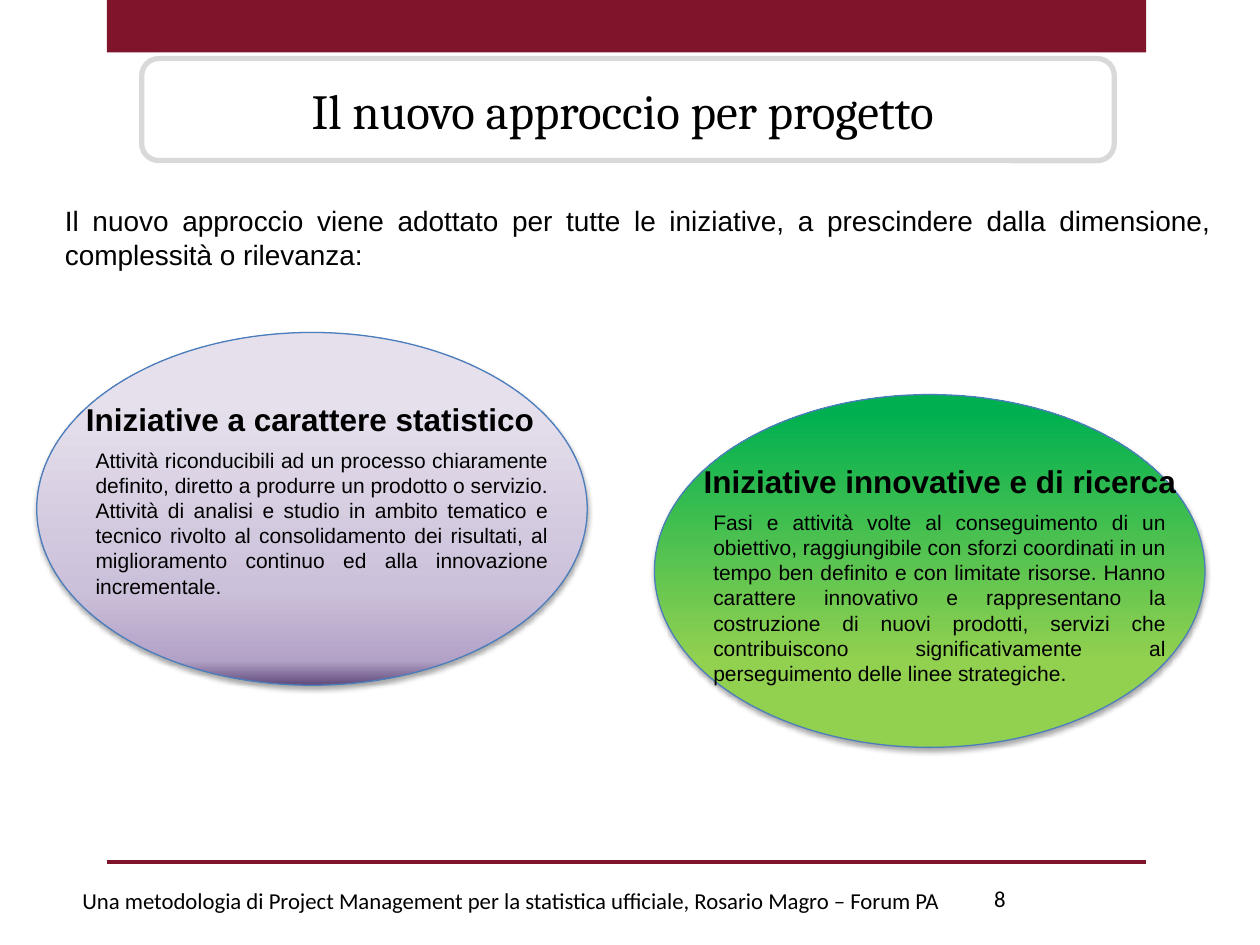
from lxml.etree import SubElement
from pptx import Presentation
from pptx.dml.color import RGBColor
from pptx.enum.shapes import MSO_CONNECTOR, MSO_SHAPE
from pptx.enum.text import MSO_ANCHOR, MSO_AUTO_SIZE, PP_ALIGN
from pptx.oxml.ns import qn
from pptx.util import Pt

COLORS = {
    "band": "7F142A",
    "frame": "D9D9D9",
    "outline": "4B7EBC",
    "paper": "FFFFFF",
    "ink": "000000",
}
VIOLET = [(0, "604A7B"), (7, "B3A2C7"), (28, "CCC1DA"), (81, "E6E0EC"), (100, "E6E0EC")]
GREEN = [(0, "92D050"), (12, "92D050"), (25, "92D050"), (95, "00B050"), (100, "00B050")]

INITIATIVES = [
    (21, 190, VIOLET, "Iniziative a carattere statistico", 273, 117,
     "Attività riconducibili ad un processo chiaramente definito, diretto a produrre "
     "un prodotto o servizio. Attività di analisi e studio in ambito tematico e tecnico "
     "rivolto al consolidamento dei risultati, al miglioramento continuo ed alla "
     "innovazione incrementale."),
    (374, 225.5, GREEN, "Iniziative innovative e di ricerca", 287, 109,
     "Fasi e attività volte al conseguimento di un obiettivo, raggiungibile con sforzi "
     "coordinati in un tempo ben definito e con limitate risorse. Hanno carattere "
     "innovativo e rappresentano la costruzione di nuovi prodotti, servizi che "
     "contribuiscono significativamente al perseguimento delle linee strategiche."),
]


class SlideBuilder:
    def __init__(self, page):
        self.page = page

    def color(self, name):
        return RGBColor.from_string(COLORS[name])

    def place(self, left, top, width, height):
        return [Pt(value) for value in (left, top, width, height)]

    def fill_text(self, frame, text, size, font="Arial", bold=False, align=PP_ALIGN.LEFT):
        paragraph = frame.paragraphs[0]
        paragraph.text = text
        paragraph.alignment = align
        paragraph.font.name = font
        paragraph.font.size = Pt(size)
        paragraph.font.bold = bold
        paragraph.font.color.rgb = self.color("ink")

    def text(self, area, text, size, wrap=True, grow=True, **style):
        frame = self.page.shapes.add_textbox(*self.place(*area)).text_frame
        frame.word_wrap = wrap
        frame.auto_size = MSO_AUTO_SIZE.SHAPE_TO_FIT_TEXT if grow else MSO_AUTO_SIZE.NONE
        self.fill_text(frame, text, size, **style)

    def shape(self, kind, area, fill=None, line=None, weight=1):
        shape = self.page.shapes.add_shape(kind, *self.place(*area))
        shape.shadow.inherit = False
        if fill:
            shape.fill.solid()
            shape.fill.fore_color.rgb = self.color(fill)
        if line:
            shape.line.color.rgb = self.color(line)
            shape.line.width = Pt(weight)
        else:
            shape.line.fill.background()
        return shape

    def rule(self, left, right, top):
        line = self.page.shapes.add_connector(
            MSO_CONNECTOR.STRAIGHT, Pt(left), Pt(top), Pt(right), Pt(top))
        line.line.color.rgb = self.color("band")
        line.line.width = Pt(2)
        SubElement(line._element.spPr, qn("a:effectLst"))

    def title(self, area, text):
        shape = self.shape(MSO_SHAPE.ROUNDED_RECTANGLE, area, "paper", "frame", 3)
        shape.rotation = 270
        frame = shape.text_frame
        frame.word_wrap = True
        frame.vertical_anchor = MSO_ANCHOR.MIDDLE
        frame._txBody.bodyPr.set("vert", "vert")
        self.fill_text(frame, text, 28, font="Cambria", align=PP_ALIGN.CENTER)

    def ellipse(self, area, stops):
        shape = self.shape(MSO_SHAPE.OVAL, area, line="outline", weight=0.75)
        shape.fill.gradient()
        shape.fill.gradient_angle = 90
        properties = shape._element.spPr
        stop_list = properties.find(".//" + qn("a:gsLst"))
        for stop in list(stop_list):
            stop_list.remove(stop)
        for position, color in stops:
            stop = SubElement(stop_list, qn("a:gs"), pos=str(position * 1000))
            SubElement(stop, qn("a:srgbClr"), val=color)
        shadow = SubElement(
            properties.find(qn("a:effectLst")), qn("a:outerShdw"),
            blurRad=str(Pt(3.1)), dist=str(Pt(1.8)), dir="5400000", rotWithShape="0")
        shade = SubElement(shadow, qn("a:srgbClr"), val=COLORS["ink"])
        SubElement(shade, qn("a:alpha"), val="35000")

    def initiative(self, left, top, stops, heading, heading_width, body_height, body):
        self.ellipse((left, top, 314.6, 201.6), stops)
        self.text((left + 21, top + 35, heading_width, 29), heading, 18, wrap=False, bold=True)
        self.text((left + 26.5, top + 62, 273, body_height), body, 12, align=PP_ALIGN.JUSTIFY)


def main():
    deck = Presentation()
    deck.slide_width, deck.slide_height = Pt(720), Pt(540)
    slide = SlideBuilder(deck.slides.add_slide(deck.slide_layouts[6]))

    slide.shape(MSO_SHAPE.RECTANGLE, (61, 0, 594, 30), "band")
    slide.rule(61, 655, 492.5)
    slide.text((30, 113, 669, 46),
               "Il nuovo approccio viene adottato per tutte le iniziative, a prescindere "
               "dalla dimensione, complessità o rilevanza:", 16, align=PP_ALIGN.JUSTIFY)
    slide.text((40, 503, 511, 29),
               "Una metodologia di Project Management per la statistica ufficiale, "
               "Rosario Magro – Forum PA", 13, grow=False, font="Calibri")
    slide.text((561, 502, 137.5, 29), "8", 13, grow=False, font="Calibri")
    slide.title((329.7, -215.3, 58.3, 555.8), "Il nuovo approccio per progetto ")
    for initiative in INITIATIVES:
        slide.initiative(*initiative)

    deck.save("out.pptx")


if __name__ == "__main__":
    main()
